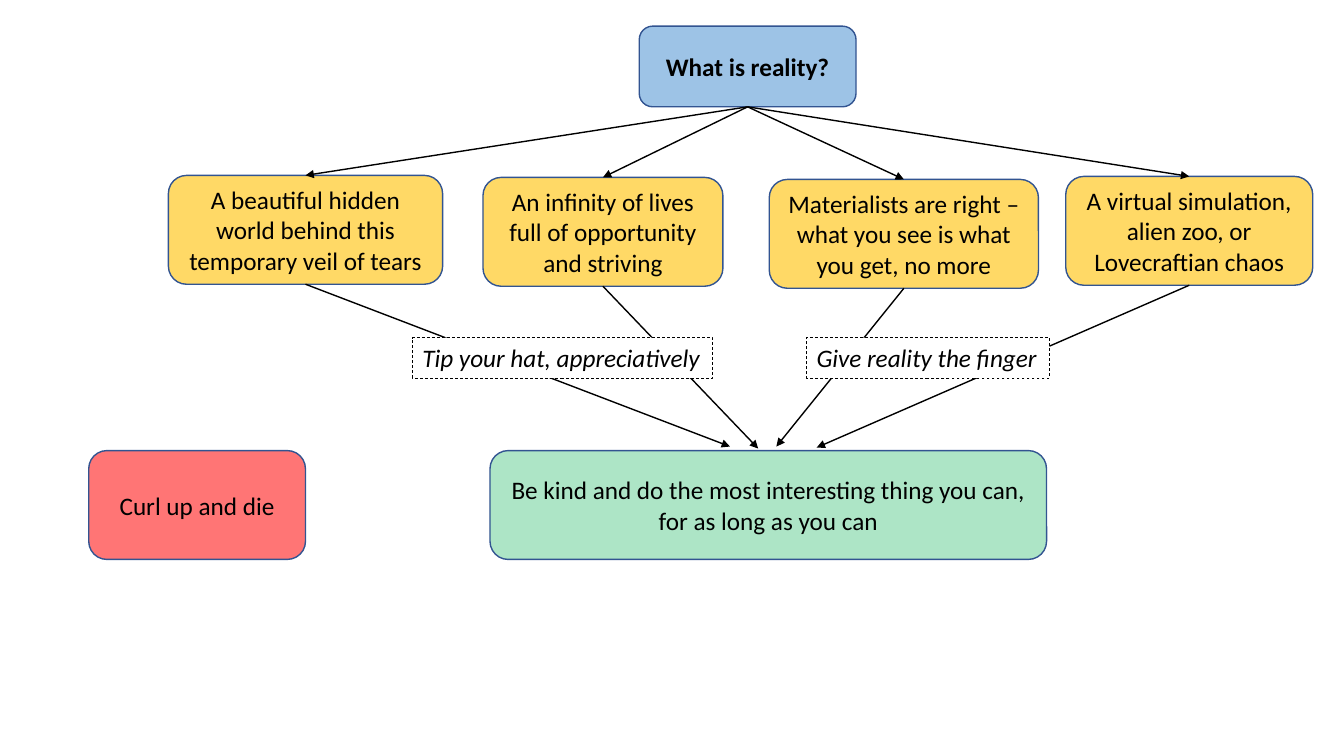
from lxml.etree import SubElement
from pptx import Presentation
from pptx.dml.color import RGBColor
from pptx.enum.dml import MSO_LINE
from pptx.enum.shapes import MSO_CONNECTOR, MSO_SHAPE
from pptx.enum.text import MSO_ANCHOR, MSO_AUTO_SIZE, PP_ALIGN
from pptx.oxml.ns import qn
from pptx.util import Pt

PX = 9144  # EMU per px, 100 px to the inch
TOP, BOTTOM = 0, 2  # connection sites of a box
COLORS = {
    "gold": "FFD966",
    "blue": "9DC3E6",
    "green": "00B050",
    "red": "FF0000",
    "edge": "325491",
    "black": "000000",
    "white": "FFFFFF",
}

# Views of reality: left, top, width, text, arrow tip below
VIEWS = [
    (167, 174, 272, "A beautiful hidden world behind this temporary veil of tears", (724, 443)),
    (479, 176, 238, "An infinity of lives full of opportunity and striving", (752, 445)),
    (763, 178, 267, "Materialists are right – what you see is what you get, no more", (770, 443)),
    (1057, 175, 245, "A virtual simulation, alien zoo, or Lovecraftian chaos", (810, 444)),
]
# Reactions: left, width, text
LABELS = [
    (409, 298, "Tip your hat, appreciatively"),
    (800, 241, "Give reality the finger"),
]


def px(*sizes):
    return [size * PX for size in sizes]


def color(name):
    return RGBColor.from_string(COLORS[name])


def paint(shape, fill, line, width):
    shape.fill.solid()
    shape.fill.fore_color.rgb = color(fill)
    shape.line.color.rgb = color(line)
    shape.line.width = Pt(width)


def write(frame, text, align, bold=False, italic=False):
    frame.text = text
    para = frame.paragraphs[0]
    para.alignment = align
    font = para.runs[0].font
    font.name, font.size = "Calibri", Pt(18)
    font.bold, font.italic = bold, italic
    font.color.rgb = color("black")


def add_box(slide, place, text, fill, bold=False, alpha=None):
    box = slide.shapes.add_shape(MSO_SHAPE.ROUNDED_RECTANGLE, *px(*place))
    box.shadow.inherit = False
    paint(box, fill, "edge", 1)
    if alpha:
        tint = box.fill._xPr.find(".//" + qn("a:srgbClr"))
        SubElement(tint, qn("a:alpha"), val=str(alpha * 1000))
    box.text_frame.word_wrap = True
    box.text_frame.vertical_anchor = MSO_ANCHOR.MIDDLE
    write(box.text_frame, text, PP_ALIGN.CENTER, bold=bold)
    return box


def add_arrow(slide, start, end=None, tip=(0, 0)):
    """Run from the bottom of start to the top of end, or to a free tip."""
    arrow = slide.shapes.add_connector(MSO_CONNECTOR.STRAIGHT, 0, 0, *px(*tip))
    arrow.begin_connect(start, BOTTOM)
    if end is not None:
        arrow.end_connect(end, TOP)
    arrow.line.color.rgb = color("black")
    arrow.line.width = Pt(1)
    SubElement(arrow.line._get_or_add_ln(), qn("a:tailEnd"), type="triangle")
    SubElement(arrow._element.spPr, qn("a:effectLst"))


def add_label(slide, left, width, text):
    label = slide.shapes.add_textbox(*px(left, 335, width, 40))
    paint(label, "white", "black", 0.5)
    label.line.dash_style = MSO_LINE.DASH
    label.text_frame.word_wrap = False
    label.text_frame.auto_size = MSO_AUTO_SIZE.SHAPE_TO_FIT_TEXT
    write(label.text_frame, text, PP_ALIGN.LEFT, italic=True)


def main():
    deck = Presentation()
    deck.slide_width, deck.slide_height = px(1333, 750)
    slide = deck.slides.add_slide(deck.slide_layouts[6])

    # Question and outcomes
    root = add_box(slide, (634, 26, 215, 80), "What is reality?", "blue", bold=True)
    add_box(slide, (486, 447, 552, 108),
            "Be kind and do the most interesting thing you can, for as long as you can",
            "green", alpha=32)
    add_box(slide, (88, 447, 215, 108), "Curl up and die", "red", alpha=54)

    # Views, each with an arrow in and an arrow out
    for left, top, width, text, tip in VIEWS:
        view = add_box(slide, (left, top, width, 108), text, "gold")
        add_arrow(slide, root, end=view)
        add_arrow(slide, view, tip=tip)

    # Reactions on top of the arrows
    for label in LABELS:
        add_label(slide, *label)

    deck.save("out.pptx")


if __name__ == "__main__":
    main()
